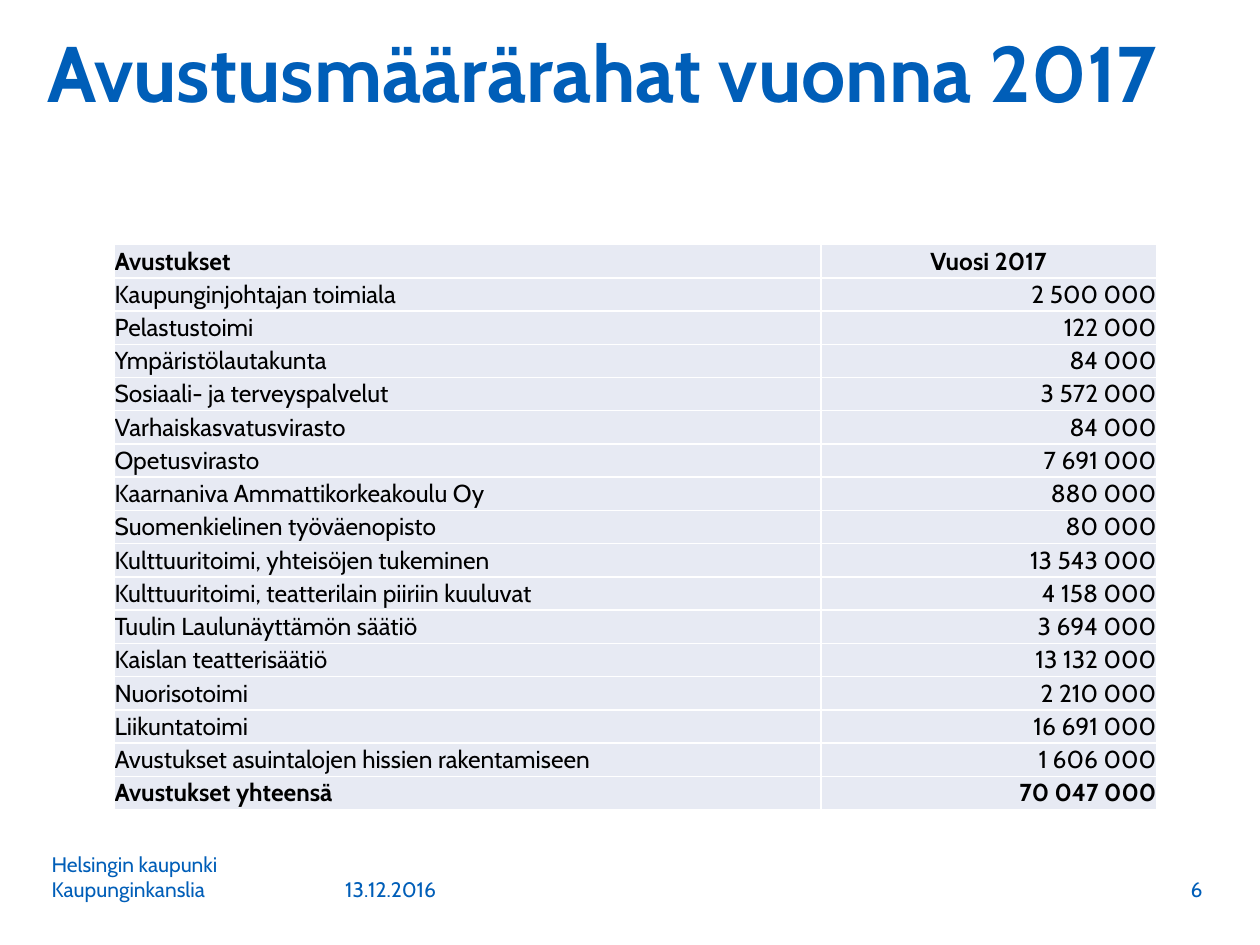
from dataclasses import dataclass

from lxml.etree import SubElement
from pptx import Presentation
from pptx.dml.color import RGBColor
from pptx.enum.text import MSO_ANCHOR as Anchor, MSO_AUTO_SIZE as AutoSize, PP_ALIGN as Align
from pptx.oxml.ns import qn
from pptx.util import Cm, Pt


@dataclass(frozen=True)
class Theme:
    font: str = "Cabin"
    blue: str = "005EB8"
    black: str = "000000"
    cell: str = "E7EAF3"
    border: str = "FFFFFF"
    title_size: int = 45
    table_size: int = 14
    footer_size: int = 12


theme = Theme()


def style(para, size, color, bold=False, align=Align.LEFT):
    para.alignment = align
    para.font.name = theme.font
    para.font.size = Pt(size)
    para.font.bold = bold
    para.font.color.rgb = RGBColor.from_string(color)


def add_borders(cell):
    properties = cell._tc.get_or_add_tcPr()
    for position, side in enumerate(("lnL", "lnR", "lnT", "lnB")):
        line = SubElement(properties, qn(f"a:{side}"), w=str(Pt(1)))
        fill = SubElement(line, qn("a:solidFill"))
        SubElement(fill, qn("a:srgbClr"), val=theme.border)
        properties.insert(position, line)


deck = Presentation()
deck.slide_width, deck.slide_height = Cm(25.4), Cm(19.05)
page = deck.slides.add_slide(deck.slide_layouts[5])

title = page.shapes.title
title.left, title.top, title.width, title.height = Cm(0.71), Cm(0.64), Cm(23.42), Cm(3.71)
title.text_frame.text = "Avustusmäärärahat vuonna 2017"
title.text_frame.vertical_anchor = Anchor.TOP
title.text_frame.auto_size = AutoSize.NONE
title_para = title.text_frame.paragraphs[0]
title_para.line_spacing = 0.85
style(title_para, theme.title_size, theme.blue, bold=True)

footers = [
    ("13.12.2016", 6.71, 3.94, 0.99, Align.LEFT),
    ("Helsingin kaupunki Kaupunginkanslia", 0.79, 5.92, 1.3, Align.LEFT),
    ("6", 21.49, 3, 0.99, Align.RIGHT),
]
footer_bottom = 18.31
for text, left, width, height, align in footers:
    box = page.shapes.add_textbox(Cm(left), Cm(footer_bottom - height), Cm(width), Cm(height))
    box.text_frame.word_wrap = True
    box.text_frame.vertical_anchor = Anchor.BOTTOM
    box.text_frame.text = text
    style(box.text_frame.paragraphs[0], theme.footer_size, theme.blue, align=align)

grants = [
    ("Avustukset", "Vuosi 2017"),
    ("Kaupunginjohtajan toimiala", "2 500 000"),
    ("Pelastustoimi", "122 000"),
    ("Ympäristölautakunta", "84 000"),
    ("Sosiaali- ja terveyspalvelut", "3 572 000"),
    ("Varhaiskasvatusvirasto", "84 000"),
    ("Opetusvirasto", "7 691 000"),
    ("Kaarnaniva Ammattikorkeakoulu Oy", "880 000"),
    ("Suomenkielinen työväenopisto", "80 000"),
    ("Kulttuuritoimi, yhteisöjen tukeminen", "13 543 000"),
    ("Kulttuuritoimi, teatterilain piiriin kuuluvat", "4 158 000"),
    ("Tuulin Laulunäyttämön säätiö", "3 694 000"),
    ("Kaislan teatterisäätiö", "13 132 000"),
    ("Nuorisotoimi", "2 210 000"),
    ("Liikuntatoimi", "16 691 000"),
    ("Avustukset asuintalojen hissien rakentamiseen", "1 606 000"),
    ("Avustukset yhteensä", "70 047 000"),
]
last_row = len(grants) - 1
column_widths = (14.24, 6.76)
row_height = 0.67
table = page.shapes.add_table(
    len(grants), len(column_widths), Cm(2.31), Cm(4.93),
    Cm(sum(column_widths)), Cm(row_height * len(grants)),
).table
for column, width in zip(table.columns, column_widths):
    column.width = Cm(width)

for row_number, grant in enumerate(grants):
    table.rows[row_number].height = Cm(row_height)
    amount_align = Align.CENTER if row_number == 0 else Align.RIGHT
    for column_number, (text, align) in enumerate(zip(grant, (Align.LEFT, amount_align))):
        cell = table.cell(row_number, column_number)
        cell.text = text
        cell.vertical_anchor = Anchor.MIDDLE
        cell.margin_left = cell.margin_right = cell.margin_top = cell.margin_bottom = 0
        cell.fill.solid()
        cell.fill.fore_color.rgb = RGBColor.from_string(theme.cell)
        add_borders(cell)
        style(cell.text_frame.paragraphs[0], theme.table_size, theme.black,
              bold=row_number in (0, last_row), align=align)

deck.save("out.pptx")
